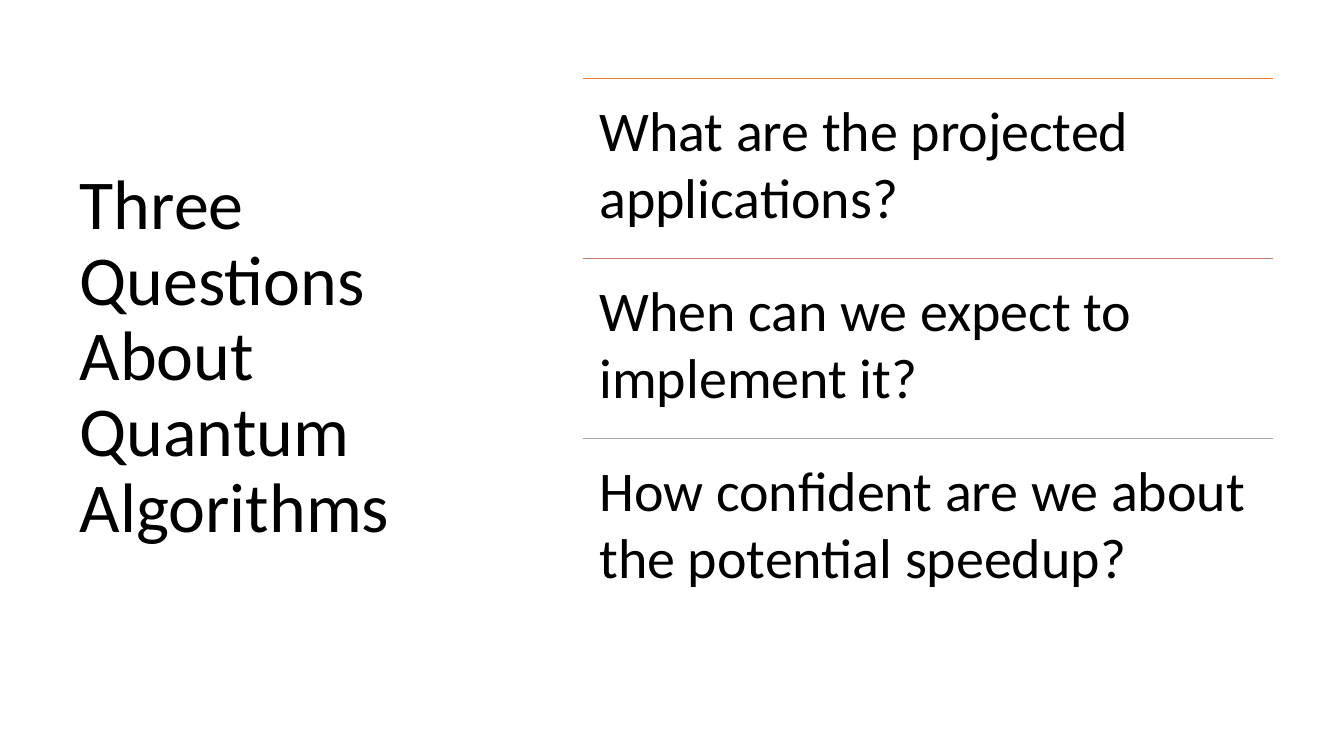
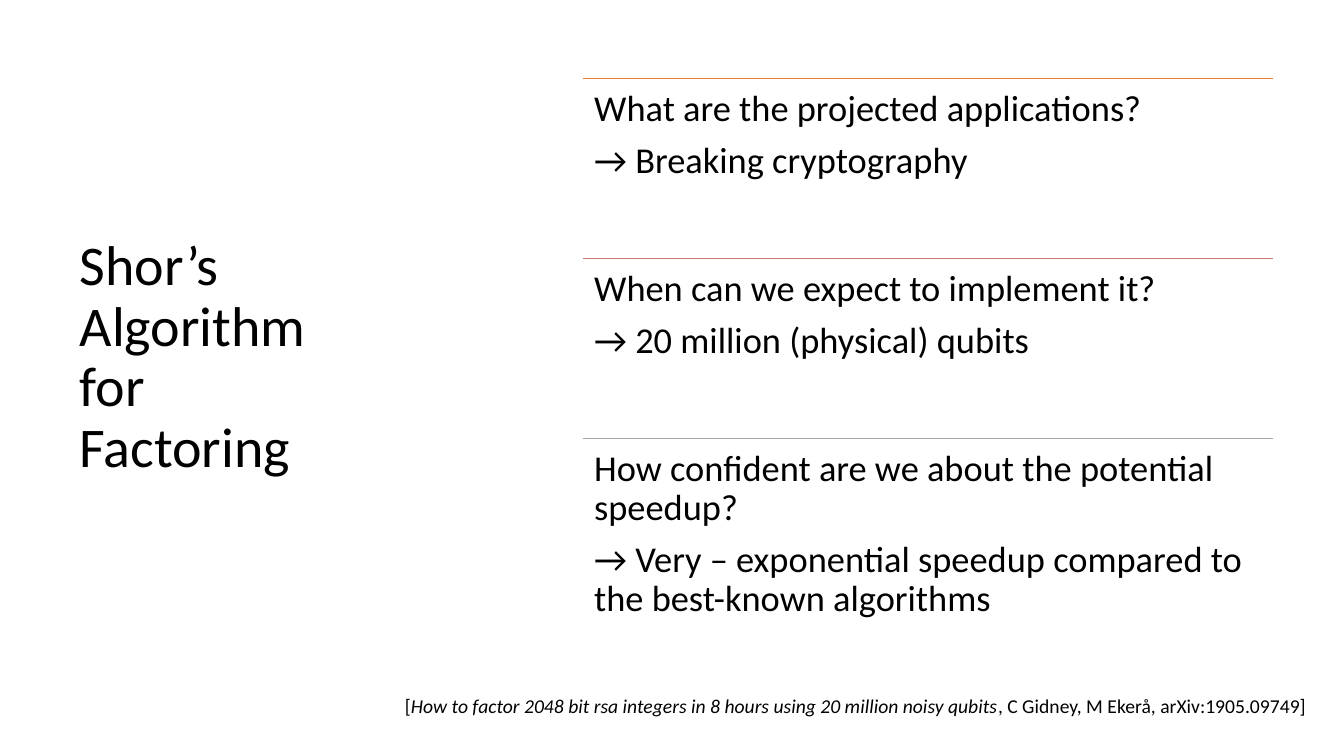
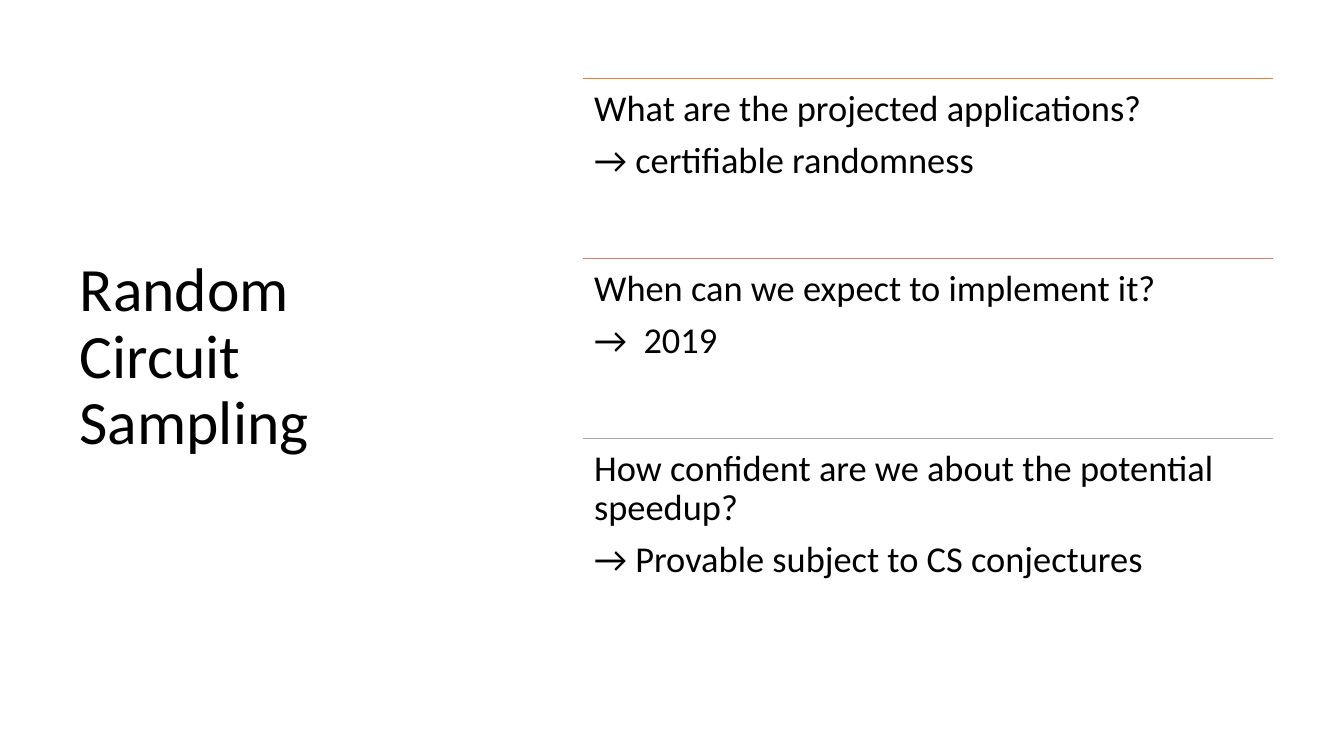
"""Build three slides that put the same three questions to quantum algorithms."""
from dataclasses import dataclass

from pptx import Presentation
from pptx.dml.color import RGBColor
from pptx.enum.shapes import MSO_CONNECTOR
from pptx.enum.text import MSO_ANCHOR, MSO_AUTO_SIZE, PP_ALIGN
from pptx.oxml.ns import qn
from pptx.slide import Slide
from pptx.text.text import Font
from pptx.util import Pt

LINE = MSO_CONNECTOR.STRAIGHT
MIDDLE = MSO_ANCHOR.MIDDLE
LEFT = PP_ALIGN.LEFT
FIXED = MSO_AUTO_SIZE.NONE

FACE = "Calibri"
COLORS = {"text": "000000", "first": "ED7D31", "second": "C48170", "third": "A5A5A5"}
RULES = ("first", "second", "third")
TITLE_BOX = (49.7, 48.2, 268.6, 415.4)
ROW_LEFT, ROW_TOP, ROW_WIDTH, ROW_HEIGHT = 416.2, 56.2, 493.2, 128.5
NOTE_BOX = (282.2, 491.8, 670, 24.5)
TIGHT = 0.9
GAP = 0.35

QUERIES = (
    "What are the projected applications?",
    "When can we expect to implement it?",
    "How confident are we about the potential speedup?",
)


@dataclass(frozen=True)
class Style:
    """Text look of the question rows."""
    size: float
    inset: float
    pitch: float


@dataclass(frozen=True)
class Page:
    """Content of one slide."""
    title: str
    size: float
    style: Style
    replies: tuple[str, ...] = ()
    note: tuple[str, ...] = ()


LARGE = Style(40, 12, 1.0)
SMALL = Style(26, 8.2, TIGHT)

PAGES = (
    Page("Three Questions About Quantum Algorithms", 50, LARGE),
    Page(
        "Shor’s Algorithm\nfor\nFactoring", 40, SMALL,
        (
            "→ Breaking cryptography",
            "→ 20 million (physical) qubits",
            "→ Very – exponential speedup compared to the best-known algorithms",
        ),
        (
            "[",
            "How to factor 2048 bit rsa integers in 8 hours using 20 million noisy qubits",
            ", C Gidney, M Ekerå, arXiv:1905.09749]",
        ),
    ),
    Page(
        "Random\nCircuit Sampling", 44, SMALL,
        (
            "→ certifiable randomness",
            "→  2019",
            "→ Provable subject to CS conjectures",
        ),
    ),
)


def set_font(font: Font, size: float) -> None:
    """Apply the shared face and colour at a size."""
    font.name = FACE
    font.size = Pt(size)
    font.color.rgb = RGBColor.from_string(COLORS["text"])


def add_title(slide: Slide, page: Page) -> None:
    """Place and format the title."""
    title = slide.shapes.title
    title.left, title.top, title.width, title.height = map(Pt, TITLE_BOX)
    frame = title.text_frame
    frame.auto_size = FIXED
    frame.word_wrap = True
    frame.vertical_anchor = MIDDLE
    para = frame.paragraphs[0]
    para.text = page.title
    para.alignment = LEFT
    para.line_spacing = TIGHT
    for run in para.runs:
        set_font(run.font, page.size)


def add_rule(slide: Slide, top: float, color: str) -> None:
    """Draw the thin line above a row."""
    rule = slide.shapes.add_connector(
        LINE, Pt(ROW_LEFT), Pt(top), Pt(ROW_LEFT + ROW_WIDTH), Pt(top))
    rule.line.color.rgb = RGBColor.from_string(COLORS[color])
    rule.line.width = Pt(0.5)
    props = rule.element.spPr
    props.append(props.makeelement(qn("a:effectLst"), {}))


def add_row(slide: Slide, top: float, lines: list[str], style: Style) -> None:
    """Write a question and its reply."""
    box = slide.shapes.add_textbox(
        Pt(ROW_LEFT), Pt(top), Pt(ROW_WIDTH), Pt(ROW_HEIGHT))
    frame = box.text_frame
    frame.word_wrap = True
    frame.margin_left = frame.margin_right = Pt(style.inset)
    frame.margin_top = frame.margin_bottom = Pt(style.inset)
    frame.text = "\n".join(lines)
    for para in frame.paragraphs:
        para.line_spacing = style.pitch
        para.space_after = Pt(round(style.size * GAP))
        for run in para.runs:
            set_font(run.font, style.size)


def add_note(slide: Slide, parts: tuple[str, ...]) -> None:
    """Write the citation with its middle part in italics."""
    box = slide.shapes.add_textbox(*map(Pt, NOTE_BOX))
    box.text_frame.word_wrap = True
    para = box.text_frame.paragraphs[0]
    for index, part in enumerate(parts):
        run = para.add_run()
        run.text = part
        set_font(run.font, 14)
        run.font.italic = index == 1


def main() -> None:
    """Draw every page and save the deck."""
    deck = Presentation()
    deck.slide_width, deck.slide_height = Pt(960), Pt(540)
    layout = deck.slide_layouts.get_by_name("Title Only")
    for page in PAGES:
        slide = deck.slides.add_slide(layout)
        add_title(slide, page)
        for index, (query, color) in enumerate(zip(QUERIES, RULES)):
            top = ROW_TOP + index * ROW_HEIGHT
            add_rule(slide, top, color)
            add_row(slide, top, [query, *page.replies[index:index + 1]], page.style)
        if page.note:
            add_note(slide, page.note)
    deck.save("out.pptx")


if __name__ == "__main__":
    main()
